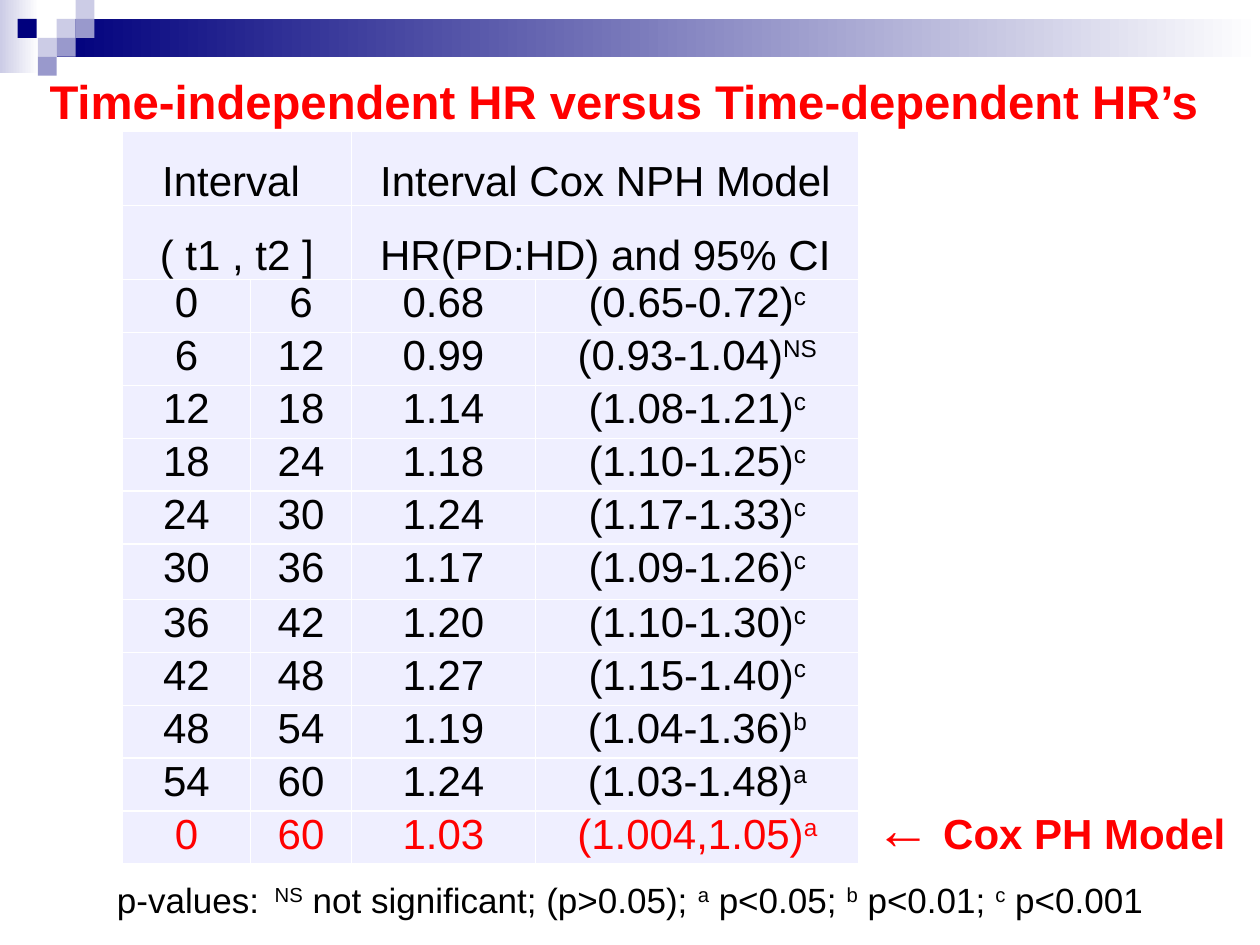
from typing import NamedTuple

from lxml.etree import SubElement
from pptx import Presentation
from pptx.dml.color import RGBColor
from pptx.enum.shapes import MSO_SHAPE
from pptx.enum.text import MSO_ANCHOR, PP_ALIGN
from pptx.oxml.ns import qn
from pptx.util import Inches, Pt

BLACK, RED, WHITE = "000000", "FF0000", "FFFFFF"
NAVY, PALE, MIDDLE, CELL = "00007D", "CCCCE6", "9999CC", "EFEFFF"
SQUARE = 0.15


class Block(NamedTuple):
    left: float
    top: float
    width: float
    height: float
    color: str
    fade_to: str = ""


class Span(NamedTuple):
    text: str
    raised: bool = False


class Result(NamedTuple):
    start: int
    end: int
    ratio: str
    interval: str
    mark: str


BLOCKS = [
    Block(0, 0, 0.31, 0.58, PALE, WHITE),
    Block(0.45, 0.15, 9.55, 0.3, NAVY, WHITE),
    *[Block(left, top, SQUARE, SQUARE, color) for left, top, color in [
        (0.45, 0.15, PALE), (0.6, 0, PALE), (0.6, 0.15, MIDDLE), (0.3, 0.3, PALE),
        (0.14, 0.15, NAVY), (0.45, 0.3, MIDDLE), (0.3, 0.45, MIDDLE)]],
]

HEADERS = [
    ("Interval ", "Interval Cox NPH Model"),
    ("( t1 , t2 ]", "HR(PD:HD) and 95% CI"),
]
RESULTS = [
    Result(0, 6, "0.68", "(0.65-0.72)", "c"),
    Result(6, 12, "0.99", "(0.93-1.04)", "NS"),
    Result(12, 18, "1.14", "(1.08-1.21)", "c"),
    Result(18, 24, "1.18", "(1.10-1.25)", "c"),
    Result(24, 30, "1.24", "(1.17-1.33)", "c"),
    Result(30, 36, "1.17", "(1.09-1.26)", "c"),
    Result(36, 42, "1.20", "(1.10-1.30)", "c"),
    Result(42, 48, "1.27", "(1.15-1.40)", "c"),
    Result(48, 54, "1.19", "(1.04-1.36)", "b"),
    Result(54, 60, "1.24", "(1.03-1.48)", "a"),
    Result(0, 60, "1.03", "(1.004,1.05)", "a"),
]
COLUMN_WIDTHS = [1.02, 0.8, 1.46, 2.57]
ROW_HEIGHTS = [0.59] * 2 + [0.42] * 5 + [0.44] + [0.42] * 5
FOOTNOTE = [
    Span("p-values: "), Span(" NS", True), Span(" not significant; (p>0.05); "),
    Span("a", True), Span(" p<0.05; "), Span("b", True), Span(" p<0.01; "),
    Span("c", True), Span(" p<0.001"),
]


def rgb(color: str) -> RGBColor:
    return RGBColor.from_string(color)


def style(font, size: float, color: str, bold: bool = False) -> None:
    font.name, font.size, font.bold = "Arial", Pt(size), bold
    font.color.rgb = rgb(color)


def write(para, spans: list[Span], size: float, color: str) -> None:
    style(para.font, size, color)
    para.alignment = PP_ALIGN.CENTER
    for span in spans:
        run = para.add_run()
        run.text = span.text
        if span.raised:
            run.font._element.set("baseline", "30000")


def draw_block(page, block: Block) -> None:
    shape = page.shapes.add_shape(MSO_SHAPE.RECTANGLE, *map(Inches, block[:4]))
    shape.shadow.inherit = False
    shape.line.fill.background()
    if block.fade_to:
        shape.fill.gradient()
        shape.fill.gradient_angle = 0
        colors = (block.color, block.fade_to)
        for position, (stop, color) in enumerate(zip(shape.fill.gradient_stops, colors)):
            stop.position = position
            stop.color.rgb = rgb(color)
    else:
        shape.fill.solid()
        shape.fill.fore_color.rgb = rgb(block.color)


def format_cell(cell) -> None:
    cell.margin_left = cell.margin_right = Inches(0.05)
    cell.margin_top = cell.margin_bottom = 0
    properties = cell._tc.get_or_add_tcPr()
    for side in ("a:lnL", "a:lnR", "a:lnT", "a:lnB"):
        border = SubElement(properties, qn(side), w=str(Pt(1)))
        SubElement(SubElement(border, qn("a:solidFill")), qn("a:srgbClr"), val=WHITE)
    cell.fill.solid()
    cell.fill.fore_color.rgb = rgb(CELL)


def fill_cell(cell, spans: list[Span], color: str = BLACK) -> None:
    para = cell.text_frame.paragraphs[0]
    para.space_before = para.space_after = Pt(3.4)
    write(para, spans, 24, color)


def draw_table(page) -> None:
    frame = page.shapes.add_table(
        len(ROW_HEIGHTS), len(COLUMN_WIDTHS), Inches(0.97), Inches(1.04),
        Inches(sum(COLUMN_WIDTHS)), Inches(sum(ROW_HEIGHTS)))
    table = frame.table
    for column, width in zip(table.columns, COLUMN_WIDTHS):
        column.width = Inches(width)
    for row, height in zip(table.rows, ROW_HEIGHTS):
        row.height = Inches(height)
    for cell in table.iter_cells():
        format_cell(cell)

    for row, labels in enumerate(HEADERS):
        for column, label in zip((0, 2), labels):
            cell = table.cell(row, column)
            cell.merge(table.cell(row, column + 1))
            cell.vertical_anchor = MSO_ANCHOR.BOTTOM
            fill_cell(cell, [Span(label)])

    for row, result in enumerate(RESULTS, len(HEADERS)):
        color = RED if result is RESULTS[-1] else BLACK
        contents = [[Span(str(value))] for value in result[:3]]
        contents.append([Span(result.interval), Span(result.mark, True)])
        for column, spans in enumerate(contents):
            fill_cell(table.cell(row, column), spans, color)


def add_text(page, left: float, top: float, width: float, height: float):
    box = page.shapes.add_textbox(*map(Inches, (left, top, width, height)))
    box.text_frame.word_wrap = True
    return box.text_frame.paragraphs[0]


def main() -> None:
    deck = Presentation()
    deck.slide_width, deck.slide_height = Inches(10), Inches(7.5)
    page = deck.slides.add_slide(deck.slide_layouts[5])

    # Header band and squares
    for block in BLOCKS:
        draw_block(page, block)

    # Title
    title = page.shapes.title
    title.left, title.top = Inches(0.08), Inches(0.5)
    title.width, title.height = Inches(9.85), Inches(0.59)
    title.text_frame.text = "Time-independent HR versus Time-dependent HR’s "
    title.text_frame.vertical_anchor = MSO_ANCHOR.MIDDLE
    para = title.text_frame.paragraphs[0]
    para.alignment = PP_ALIGN.CENTER
    style(para.font, 27, RED, True)

    # Hazard ratios
    draw_table(page)

    # Footnote
    write(add_text(page, 0.15, 6.92, 9.7, 0.44), FOOTNOTE, 20, BLACK)

    # Label of the last row
    para = add_text(page, 6.85, 6.25, 2.98, 0.64)
    for text, size, bold in (("←", 32, False), (" Cox PH Model", 24, True)):
        run = para.add_run()
        run.text = text
        style(run.font, size, RED, bold)

    deck.save("out.pptx")


if __name__ == "__main__":
    main()
